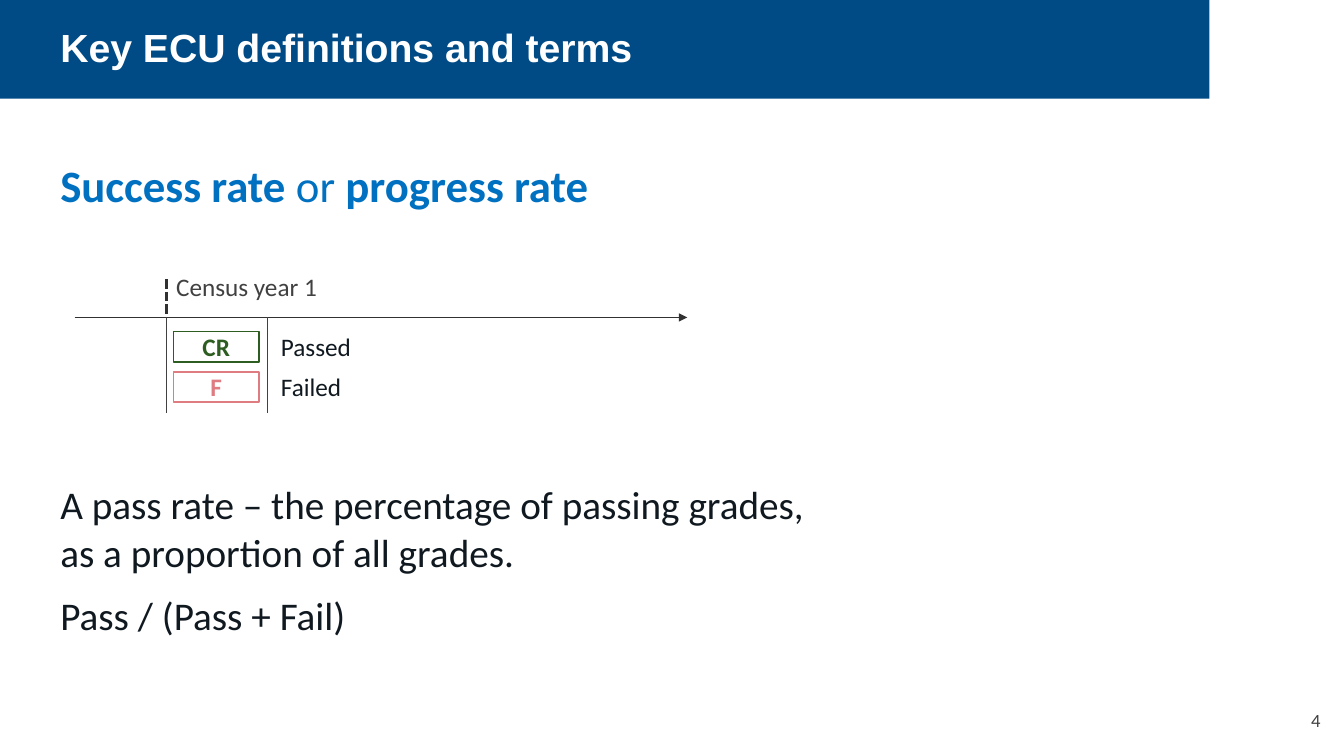
from dataclasses import dataclass

from lxml.etree import SubElement
from pptx import Presentation
from pptx.dml.color import RGBColor
from pptx.enum.dml import MSO_LINE
from pptx.enum.shapes import MSO_CONNECTOR, MSO_SHAPE
from pptx.enum.text import MSO_ANCHOR, PP_ALIGN
from pptx.oxml.ns import qn
from pptx.util import Cm, Pt


@dataclass(frozen=True)
class Theme:
    navy: str = "004B85"
    blue: str = "0070C0"
    ink: str = "101920"
    gray: str = "404140"
    axis: str = "303130"
    green: str = "2E5D21"
    red: str = "DF7C81"
    white: str = "FFFFFF"
    head: float = 32
    body: float = 28
    label: float = 18
    small: float = 13.3


THEME = Theme()


def rgb(code):
    return RGBColor.from_string(code)


def style(para, size, color, bold=None, face="Calibri"):
    font = para.font
    font.name, font.size, font.bold = face, Pt(size), bold
    font.color.rgb = rgb(color)


def add_text(slide, box, lines, size, color, **look):
    """Add a text box with one paragraph per line and return its frame."""
    frame = slide.shapes.add_textbox(*map(Cm, box)).text_frame
    frame.word_wrap = True
    for i, line in enumerate(lines):
        para = frame.add_paragraph() if i else frame.paragraphs[0]
        para.text = line
        style(para, size, color, **look)
    return frame


def add_rect(slide, box, fill, edge=None):
    shape = slide.shapes.add_shape(MSO_SHAPE.RECTANGLE, *map(Cm, box))
    shape.shadow.inherit = False
    shape.fill.solid()
    shape.fill.fore_color.rgb = rgb(fill)
    if edge:
        shape.line.color.rgb = rgb(edge)
        shape.line.width = Pt(1)
    else:
        shape.line.fill.background()
    return shape


def add_grade(slide, box, code, color):
    """Add an outlined box holding a grade code."""
    frame = add_rect(slide, box, THEME.white, color).text_frame
    frame.vertical_anchor = MSO_ANCHOR.MIDDLE
    para = frame.paragraphs[0]
    para.text = code
    para.alignment = PP_ALIGN.CENTER
    style(para, THEME.label, color, bold=True)


def add_line(slide, ends, color, width=0.5, dash=None, arrow=False):
    link = slide.shapes.add_connector(MSO_CONNECTOR.STRAIGHT, *map(Cm, ends))
    link.line.color.rgb = rgb(color)
    link.line.width = Pt(width)
    if dash:
        link.line.dash_style = dash
    if arrow:
        SubElement(link.line._get_or_add_ln(), qn("a:tailEnd"), type="triangle")
    SubElement(link._element.spPr, qn("a:effectLst"))


def add_banner(slide, title):
    add_rect(slide, (0, 0, 30.48, 2.49), THEME.navy)
    frame = add_text(slide, (1.27, 0, 29.21, 2.49), [title],
                     THEME.body, THEME.white, bold=True, face="Arial")
    frame.vertical_anchor = MSO_ANCHOR.MIDDLE
    frame.paragraphs[0].line_spacing = 0.9


def add_heading(slide, parts):
    frame = add_text(slide, (1.27, 3.86, 20.93, 1.63), [""],
                     THEME.head, THEME.blue)
    for text, bold in parts:
        run = frame.paragraphs[0].add_run()
        run.text, run.font.bold = text, bold


def add_timeline(slide, grades):
    left, right, level = 4.19, 6.73, 8
    add_line(slide, (1.88, level, 17.32, level), THEME.axis, arrow=True)
    add_line(slide, (left, 7.04, left, level), THEME.axis, 2.25,
             MSO_LINE.SQUARE_DOT)
    add_text(slide, (left, 6.71, 5.05, 1.02), ["Census year 1"],
             THEME.label, THEME.gray)
    for x in (left, right):
        add_line(slide, (x, level, x, 10.41), THEME.gray)
    for i, (code, label, color) in enumerate(grades):
        top = 8.36 + i * 1.01
        add_grade(slide, (4.37, top, 2.16, 0.76), code, color)
        add_text(slide, (6.83, top - 0.14, 4, 1.04), [label],
                 THEME.label, THEME.ink)


def main():
    deck = Presentation()
    deck.slide_width, deck.slide_height = Cm(33.87), Cm(19.05)
    slide = deck.slides.add_slide(deck.slide_layouts[6])

    add_banner(slide, "Key ECU definitions and terms")
    add_heading(slide, [("Success rate ", True), ("or", False),
                        (" progress rate", True)])
    add_timeline(slide, [("CR", "Passed", THEME.green),
                         ("F", "Failed", THEME.red)])
    rule = add_text(slide, (1.27, 11.99, 25.76, 4.27), [
        "A pass rate – the percentage of passing grades, \v"
        "as a proportion of all grades.",
        "Pass / (Pass + Fail)",
    ], THEME.body, THEME.ink)
    for para in rule.paragraphs:
        para.space_after = Pt(12)
    page = add_text(slide, (31.75, 17.73, 1.78, 0.84), ["4"],
                    THEME.small, THEME.gray)
    page.paragraphs[0].alignment = PP_ALIGN.RIGHT

    deck.save("out.pptx")


if __name__ == "__main__":
    main()
